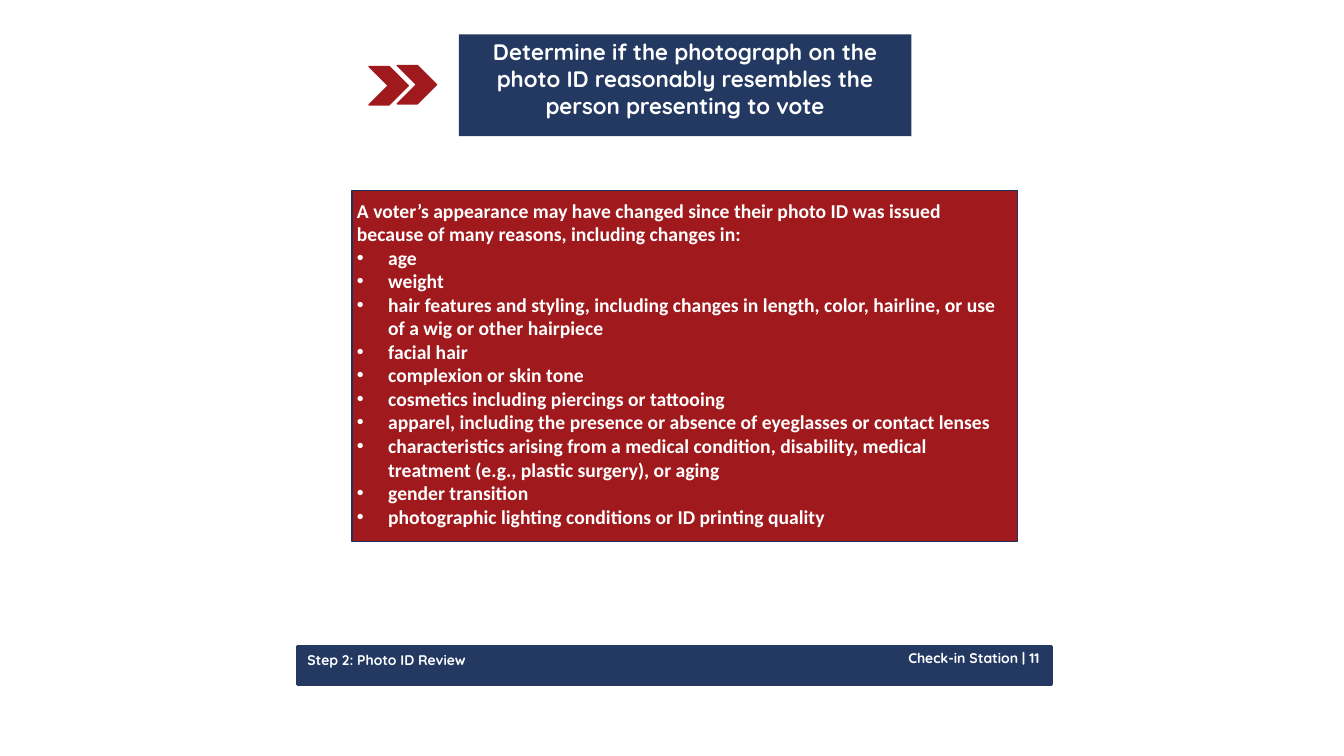
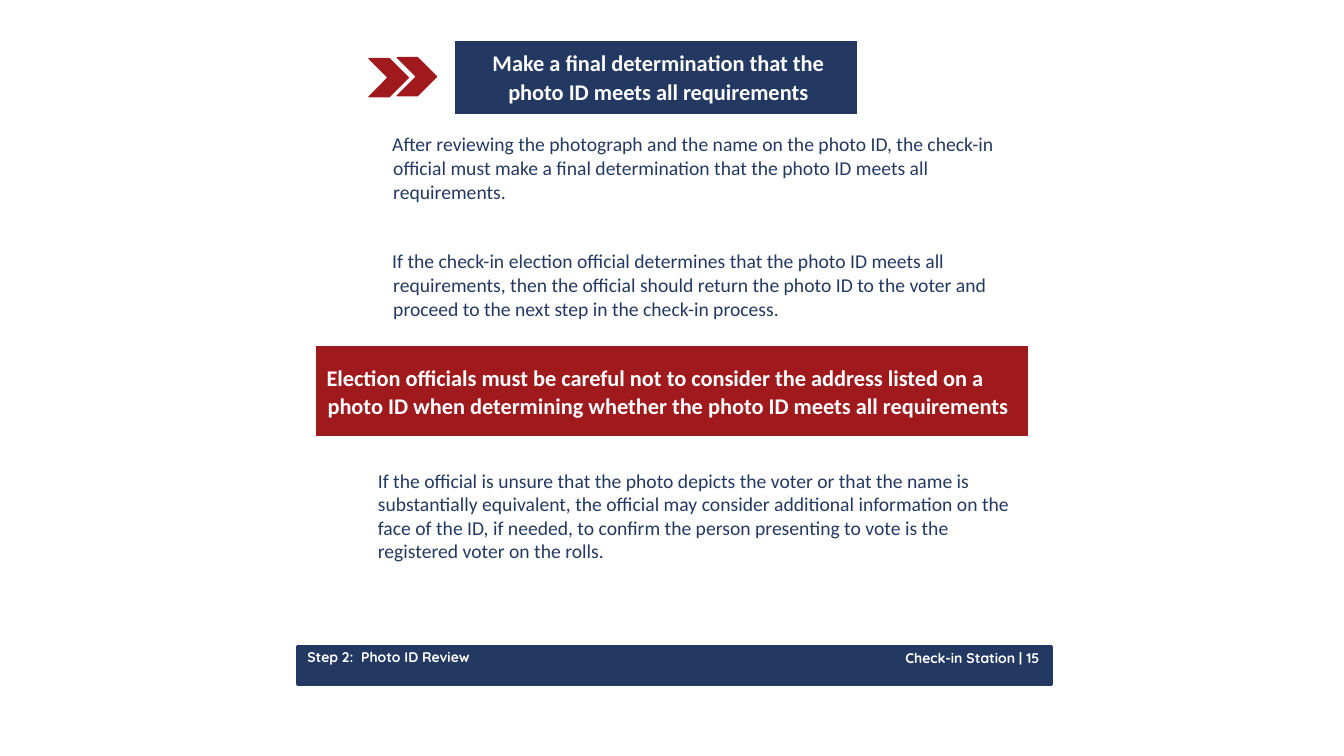
from pptx import Presentation
from pptx.dml.color import RGBColor
from pptx.enum.shapes import MSO_SHAPE as Form
from pptx.enum.text import MSO_ANCHOR as Anchor, MSO_AUTO_SIZE as Fit, PP_ALIGN as Align
from pptx.oxml.ns import qn
from pptx.util import Inches, Pt
from lxml.etree import SubElement

# Shared look
NAVY, EDGE, RED, WHITE = "233962", "1E3256", "A0191D", "FFFFFF"
HEAD, BODY = "Quicksand", "Calibri"
PAD = (0.1, 0.05, 0.1, 0.05)

# Content
PHOTO = {
    "title": "Determine if the photograph on the photo ID reasonably resembles "
             "the person presenting to vote",
    "lead": "A voter’s appearance may have changed since their photo ID was issued "
            "because of many reasons, including changes in:",
    "items": [
        "age",
        "weight",
        "hair features and styling, including changes in length, color, hairline, "
        "or use of a wig or other hairpiece",
        "facial hair",
        "complexion or skin tone",
        "cosmetics including piercings or tattooing",
        "apparel, including the presence or absence of eyeglasses or contact lenses",
        "characteristics arising from a medical condition, disability, medical "
        "treatment (e.g., plastic surgery), or aging",
        "gender transition",
        "photographic lighting conditions or ID printing quality",
    ],
    "foot": ("Step 2: Photo ID Review", "Check-in Station | 11"),
}
FINAL = {
    "title": "Make a final determination that the photo ID meets all requirements",
    "steps": [
        "After reviewing the photograph and the name on the photo ID, the check-in "
        "official must make a final determination that the photo ID meets all requirements.",
        "If the check-in election official determines that the photo ID meets all "
        "requirements, then the official should return the photo ID to the voter and "
        "proceed to the next step in the check-in process.",
    ],
    "alert": "Election officials must be careful not to consider the address listed on a "
             "photo ID when determining whether the photo ID meets all requirements",
    "note": "If the official is unsure that the photo depicts the voter or that the name is "
            "substantially equivalent, the official may consider additional information on "
            "the face of the ID, if needed, to confirm the person presenting to vote is the "
            "registered voter on the rolls.",
    "foot": ("Step 2:  Photo ID Review", "Check-in Station | 15"),
}


def color(code):
    return RGBColor.from_string(code)


def place(shape, box):
    shape.left, shape.top, shape.width, shape.height = map(Inches, box)


def block(shapes, form, box, fill, line=None, width=1):
    shape = shapes.add_shape(form, *map(Inches, box))
    shape.shadow.inherit = False
    shape.fill.solid()
    shape.fill.fore_color.rgb = color(fill)
    if line:
        shape.line.color.rgb = color(line)
        shape.line.width = Pt(width)
    else:
        shape.line.fill.background()
    return shape


def frame(shape, pad=PAD, anchor=Anchor.TOP):
    text = shape.text_frame
    text.word_wrap, text.auto_size = True, Fit.NONE
    text.vertical_anchor = anchor
    text.margin_left, text.margin_top, text.margin_right, text.margin_bottom = map(Inches, pad)
    return text


def write(text, lines, size, ink, font=BODY, bold=False, align=Align.LEFT,
          lead=1.0, after=0, left=0, hang=0):
    """Fill a text frame, one paragraph for each line."""
    for i, line in enumerate(lines):
        para = text.paragraphs[0] if i == 0 else text.add_paragraph()
        para.alignment, para.line_spacing = align, lead
        para.space_before, para.space_after = Pt(0), Pt(after)
        run = para.add_run()
        run.text = line
        run.font.name, run.font.size, run.font.bold = font, Pt(size), bold
        run.font.color.rgb = color(ink)
        bullet(para, left, hang)


def bullet(para, left, hang, mark=None):
    props = para._p.get_or_add_pPr()
    for old in props.findall(qn("a:buNone")):
        props.remove(old)
    props.set("marL", str(Inches(left)))
    props.set("indent", str(Inches(hang)))
    if mark:
        SubElement(props, qn("a:buChar")).set("char", mark)
    else:
        SubElement(props, qn("a:buNone"))


def label(shapes, box, line, pad=PAD, align=Align.LEFT):
    text = frame(shapes.add_textbox(*map(Inches, box)), pad)
    write(text, [line], 10, WHITE, HEAD, True, align)


def arrows(slide, top):
    pair = slide.shapes.add_group_shape().shapes
    for left, drop in ((3.94, 0), (3.66, 0.01)):
        block(pair, Form.CHEVRON, (left, top + drop, 0.39, 0.38), RED, RED)


def footer(slide, names, top):
    group = slide.shapes.add_group_shape().shapes
    block(group, Form.RECTANGLE, (2.95, 6.41, 7.48, 0.38), NAVY, NAVY, 2)
    label(group, (4.22, 6.4, 6.17, 0.39), names[1], (0.04, 0.04, 0.08, 0.04), Align.RIGHT)
    label(group, (2.95, top, 3.11, 0.27), names[0])


def photo(deck):
    slide = deck.slides.add_slide(deck.slide_layouts[1])
    title, body = slide.placeholders
    # Title band
    place(title, (4.55, 0.34, 4.49, 1.01))
    title.fill.solid()
    title.fill.fore_color.rgb = color(NAVY)
    write(frame(title, (0.04,) * 4), [PHOTO["title"]], 16, WHITE, HEAD, True, Align.CENTER)
    arrows(slide, 0.65)
    # List over its red panel
    block(slide.shapes, Form.RECTANGLE, (3.49, 1.89, 6.6, 3.48), RED, EDGE)
    slide.shapes.element.append(body.element)
    place(body, (3.44, 1.92, 6.67, 3.7))
    text = frame(body)
    write(text, [PHOTO["lead"]] + PHOTO["items"], 14, WHITE, bold=True)
    for para in text.paragraphs[1:]:
        bullet(para, 0.31, -0.31, "•")
    footer(slide, PHOTO["foot"], 6.41)


def final(deck):
    slide = deck.slides.add_slide(deck.slide_layouts[1])
    title, body = slide.placeholders
    title.element.getparent().remove(title.element)
    # Heading table
    box = map(Inches, (4.51, 0.4, 4, 0.74))
    cell = slide.shapes.add_table(1, 1, *box).table.cell(0, 0)
    cell.fill.solid()
    cell.fill.fore_color.rgb = color(NAVY)
    cell.margin_left, cell.margin_top = Inches(0.2), Inches(0.08)
    cell.margin_right, cell.margin_bottom = Inches(0.16), Inches(0)
    write(cell.text_frame, [FINAL["title"]], 16, WHITE, bold=True,
          align=Align.CENTER, lead=1.07)
    arrows(slide, 0.57)
    # Steps, warning and note
    place(body, (3.33, 1.25, 6.67, 2))
    write(frame(body), FINAL["steps"], 14, NAVY, lead=1.02, after=32.8, left=0.47, hang=-0.01)
    alert = block(slide.shapes, Form.RECTANGLE, (3.14, 3.44, 7.05, 0.88), RED, RED)
    write(frame(alert, anchor=Anchor.MIDDLE), [FINAL["alert"]], 16, WHITE, bold=True,
          lead=1.02, after=16.1, left=0.01, hang=-0.01)
    note = slide.shapes.add_textbox(*map(Inches, (3.65, 4.6, 6.67, 1.04)))
    write(frame(note), [FINAL["note"]], 14, NAVY)
    footer(slide, FINAL["foot"], 6.38)


def main():
    deck = Presentation()
    deck.slide_width, deck.slide_height = Inches(13.33), Inches(7.5)
    photo(deck)
    final(deck)
    deck.save("out.pptx")


if __name__ == "__main__":
    main()
